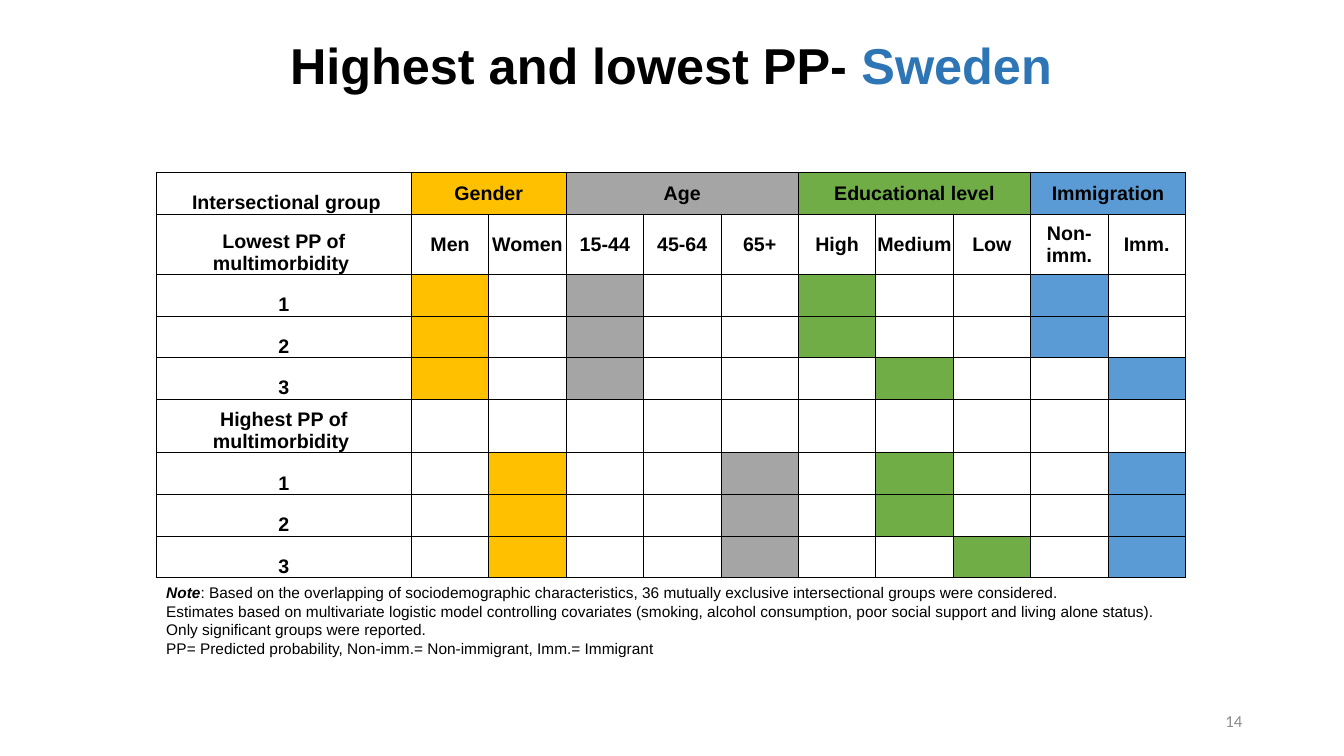
from lxml.etree import SubElement
from pptx import Presentation
from pptx.dml.color import RGBColor
from pptx.enum.text import MSO_ANCHOR, PP_ALIGN
from pptx.oxml.ns import qn
from pptx.util import Inches, Pt

BLACK = RGBColor(0, 0, 0)
WHITE = RGBColor(255, 255, 255)
BLUE = RGBColor(0x2E, 0x75, 0xB6)
GRAY = RGBColor(0x8C, 0x8C, 0x8C)
GOLD = RGBColor(0xFF, 0xC0, 0)
SILVER = RGBColor(0xA5, 0xA5, 0xA5)
GREEN = RGBColor(0x70, 0xAD, 0x47)
SKY = RGBColor(0x5B, 0x9B, 0xD5)

TITLE = [[("Highest and lowest PP- ", BLACK, True, False), ("Sweden", BLUE, True, False)]]
NUMBER = [[("14", GRAY, False, False)]]
NOTES = [
    [("Note", BLACK, True, True),
     (": Based on the overlapping of sociodemographic characteristics, "
      "36 mutually exclusive intersectional groups were considered.", BLACK, False, False)],
    [("Estimates based on multivariate logistic model controlling covariates "
      "(smoking, alcohol consumption, poor social support and living alone status).",
      BLACK, False, False)],
    [("Only significant groups were reported.", BLACK, False, False)],
    [("PP= Predicted probability, Non-imm.= Non-immigrant, Imm.= Immigrant",
      BLACK, False, False)],
]
GROUPS = [
    ("Gender", GOLD, ["Men", "Women"]),
    ("Age", SILVER, ["15-44", "45-64", "65+"]),
    ("Educational level", GREEN, ["High", "Medium", "Low"]),
    ("Immigration", SKY, ["Non-imm.", "Imm."]),
]
ROWS = [
    (" Intersectional group", 0.41, []),
    ("Lowest PP of multimorbidity ", 0.6, []),
    ("1", 0.41, ["Men", "15-44", "High", "Non-imm."]),
    ("2", 0.41, ["Men", "15-44", "High", "Non-imm."]),
    ("3", 0.41, ["Men", "15-44", "Medium", "Imm."]),
    ("Highest PP of multimorbidity ", 0.53, []),
    ("1", 0.41, ["Women", "65+", "Medium", "Imm."]),
    ("2", 0.41, ["Women", "65+", "Medium", "Imm."]),
    ("3", 0.41, ["Women", "65+", "Low", "Imm."]),
]
LEFT, WIDTH, TOP, HIGH, FIRST = 1.55, 10.21, 1.71, 4.02, 2.53


def add_run(par, text, size, color, bold, slant=False, face="Arial"):
    """Add one styled run to a paragraph."""
    run = par.add_run()
    run.text = text
    font = run.font
    font.name, font.size, font.bold, font.italic = face, Pt(size), bold, slant
    font.color.rgb = color


def add_text(slide, area, lines, size, align, anchor=MSO_ANCHOR.MIDDLE, face="Arial", space=1.0):
    """Add a wrapped text box made of styled lines."""
    frame = slide.shapes.add_textbox(*map(Inches, area)).text_frame
    frame.word_wrap = True
    frame.vertical_anchor = anchor
    for i, line in enumerate(lines):
        par = frame.paragraphs[0] if i == 0 else frame.add_paragraph()
        par.alignment, par.line_spacing = align, space
        for text, color, bold, slant in line:
            add_run(par, text, size, color, bold, slant, face)


def style(cell):
    """Give a cell thin black borders, tight margins and a white fill."""
    props = cell._tc.get_or_add_tcPr()
    for side in ("a:lnL", "a:lnR", "a:lnT", "a:lnB"):
        line = SubElement(props, qn(side), w=str(Pt(0.5)))
        SubElement(SubElement(line, qn("a:solidFill")), qn("a:srgbClr"), val=str(BLACK))
    cell.margin_left = cell.margin_right = cell.margin_top = Inches(0.01)
    cell.margin_bottom = 0
    paint(cell, WHITE)


def paint(cell, color):
    """Fill a cell with one colour."""
    cell.fill.solid()
    cell.fill.fore_color.rgb = color


def label(cell, text, anchor=MSO_ANCHOR.MIDDLE):
    """Write a bold centred label in a cell."""
    cell.vertical_anchor = anchor
    par = cell.text_frame.paragraphs[0]
    par.alignment = PP_ALIGN.CENTER
    add_run(par, text, 14, BLACK, True)


def add_grid(slide):
    """Build the table of intersectional groups."""
    heads = [(name, color) for _, color, names in GROUPS for name in names]
    area = map(Inches, (LEFT, TOP, WIDTH, HIGH))
    grid = slide.shapes.add_table(len(ROWS), len(heads) + 1, *area).table
    grid.first_row = grid.horz_banding = False
    for i, col in enumerate(grid.columns):
        col.width = Inches((WIDTH - FIRST) / len(heads) if i else FIRST)
    for cell in grid.iter_cells():
        style(cell)
    total = sum(share for _, share, _ in ROWS)
    for r, (text, share, marks) in enumerate(ROWS):
        grid.rows[r].height = Inches(HIGH * share / total)
        label(grid.cell(r, 0), text, MSO_ANCHOR.BOTTOM)
        for c, (name, color) in enumerate(heads, 1):
            if name in marks:
                paint(grid.cell(r, c), color)
    for c, (name, _) in enumerate(heads, 1):
        label(grid.cell(1, c), name)
    start = 1
    for text, color, names in GROUPS:
        cell = grid.cell(0, start)
        start += len(names)
        cell.merge(grid.cell(0, start - 1))
        paint(cell, color)
        label(cell, text)


def main():
    """Build and save the slide."""
    deck = Presentation()
    deck.slide_width, deck.slide_height = Inches(13.33), Inches(7.5)
    slide = deck.slides.add_slide(deck.slide_layouts[6])
    add_text(slide, (LEFT, 0.11, WIDTH, 1.13), TITLE, 36, PP_ALIGN.CENTER, space=0.9)
    add_text(slide, (9.42, 6.95, 3, 0.4), NUMBER, 12, PP_ALIGN.RIGHT, face="Calibri")
    add_grid(slide)
    add_text(slide, (LEFT, TOP + HIGH + 0.01, WIDTH, 0.84), NOTES, 11, PP_ALIGN.LEFT,
             MSO_ANCHOR.TOP)
    deck.save("out.pptx")


if __name__ == "__main__":
    main()
